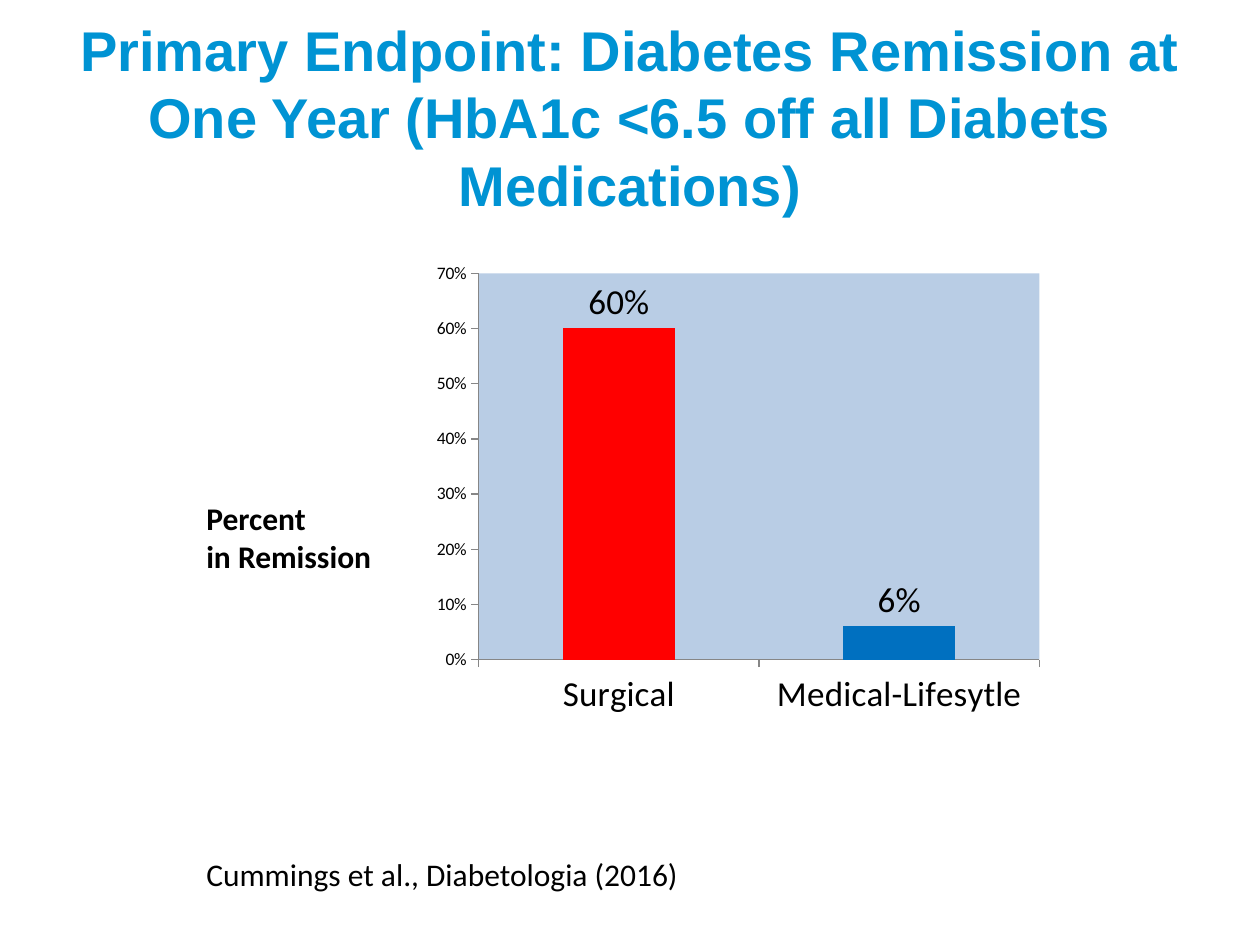
from dataclasses import dataclass

from lxml import etree
from pptx import Presentation
from pptx.chart import data as cd
from pptx.dml.color import RGBColor
from pptx.enum import chart as ch, text
from pptx.oxml import ns
from pptx.util import Cm, Pt


@dataclass(frozen=True)
class Theme:
    title: str = "0093D3"
    ink: str = "000000"
    axis: str = "868686"
    plot: str = "B9CDE5"
    bars: tuple = ("FF0000", "0070C0")
    heading_font: str = "Arial"
    body_font: str = "Calibri"
    heading_size: int = 32
    body_size: int = 18
    label_size: int = 20
    tick_size: int = 10


THEME = Theme()
TITLE = ["Primary Endpoint: Diabetes Remission at One Year "
         "(HbA1c <6.5 off all Diabets Medications)"]
AXIS_CAPTION = ["Percent", "in Remission"]
CITATION = ["Cummings et al., Diabetologia (2016)"]
REMISSION = {"Surgical": 0.6, "Medical-Lifesytle": 0.06}
PLOT_FRAME = {"x": 0.09, "y": 0.04, "w": 0.89, "h": 0.82}


def rgb(value):
    return RGBColor.from_string(value)


def paint(fill, color):
    fill.solid()
    fill.fore_color.rgb = rgb(color)


def set_font(font, size, color=THEME.ink, name=THEME.body_font, bold=False):
    font.size, font.name, font.bold = Pt(size), name, bold
    font.color.rgb = rgb(color)


def add_text(slide, box, lines, size, wrap=False, align=text.PP_ALIGN.LEFT,
             anchor=text.MSO_ANCHOR.TOP, **style):
    tf = slide.shapes.add_textbox(*map(Cm, box)).text_frame
    tf.word_wrap = wrap
    tf.vertical_anchor = anchor
    for i, line in enumerate(lines):
        p = tf.add_paragraph() if i else tf.paragraphs[0]
        p.alignment = align
        r = p.add_run()
        r.text = line
        set_font(r.font, size, **style)


def place_plot(plot_area, frame):
    for old in plot_area.findall(ns.qn("c:layout")):
        plot_area.remove(old)
    layout = etree.Element(ns.qn("c:layout"))
    manual = etree.SubElement(layout, ns.qn("c:manualLayout"))
    settings = {"layoutTarget": "inner", "xMode": "edge", "yMode": "edge", **frame}
    for tag, value in settings.items():
        etree.SubElement(manual, ns.qn(f"c:{tag}")).set("val", str(value))
    plot_area.insert(0, layout)


def fill_plot(plot_area, color):
    props = etree.SubElement(plot_area, ns.qn("c:spPr"))
    solid = etree.SubElement(props, ns.qn("a:solidFill"))
    etree.SubElement(solid, ns.qn("a:srgbClr")).set("val", color)


def add_remission_chart(slide, box):
    data = cd.CategoryChartData(number_format="0%")
    data.categories = list(REMISSION)
    data.add_series("Series 1", list(REMISSION.values()))
    chart = slide.shapes.add_chart(
        ch.XL_CHART_TYPE.COLUMN_CLUSTERED, *map(Cm, box), data).chart
    chart.has_legend = chart.has_title = False
    set_font(chart.font, THEME.tick_size)

    plot = chart.plots[0]
    plot.gap_width, plot.vary_by_categories = 150, False
    series = plot.series[0]
    paint(series.format.fill, THEME.bars[1])
    paint(series.points[0].format.fill, THEME.bars[0])
    labels = series.data_labels
    labels.show_value = True
    labels.number_format, labels.number_format_is_linked = "0%", False
    labels.position = ch.XL_LABEL_POSITION.OUTSIDE_END
    set_font(labels.font, THEME.label_size)

    for axis, size in ((chart.category_axis, THEME.label_size),
                       (chart.value_axis, THEME.tick_size)):
        axis.has_major_gridlines = False
        axis.major_tick_mark = ch.XL_TICK_MARK.OUTSIDE
        axis.minor_tick_mark = ch.XL_TICK_MARK.NONE
        axis.format.line.color.rgb = rgb(THEME.axis)
        axis.format.line.width = Pt(0.75)
        set_font(axis.tick_labels.font, size)
    value_axis = chart.value_axis
    value_axis.minimum_scale, value_axis.maximum_scale = 0, 0.7
    value_axis.major_unit = 0.1
    value_axis.tick_labels.number_format = "0%"
    value_axis.tick_labels.number_format_is_linked = False

    plot_area = chart.element.find(f".//{ns.qn('c:plotArea')}")
    place_plot(plot_area, PLOT_FRAME)
    fill_plot(plot_area, THEME.plot)


def main():
    prs = Presentation()
    prs.slide_width, prs.slide_height = Cm(25.4), Cm(19.05)
    s = prs.slides.add_slide(prs.slide_layouts[6])
    add_text(s, (1.27, 0.76, 22.86, 3.18), TITLE, THEME.heading_size, wrap=True,
             align=text.PP_ALIGN.CENTER, anchor=text.MSO_ANCHOR.MIDDLE,
             color=THEME.title, name=THEME.heading_font, bold=True)
    add_text(s, (3.91, 9.93, 3.86, 1.8), AXIS_CAPTION, THEME.body_size, bold=True)
    add_text(s, (3.91, 17.12, 10.13, 1.02), CITATION, THEME.body_size)
    add_remission_chart(s, (8.51, 5.13, 12.7, 9.5))
    prs.save("out.pptx")


if __name__ == "__main__":
    main()
